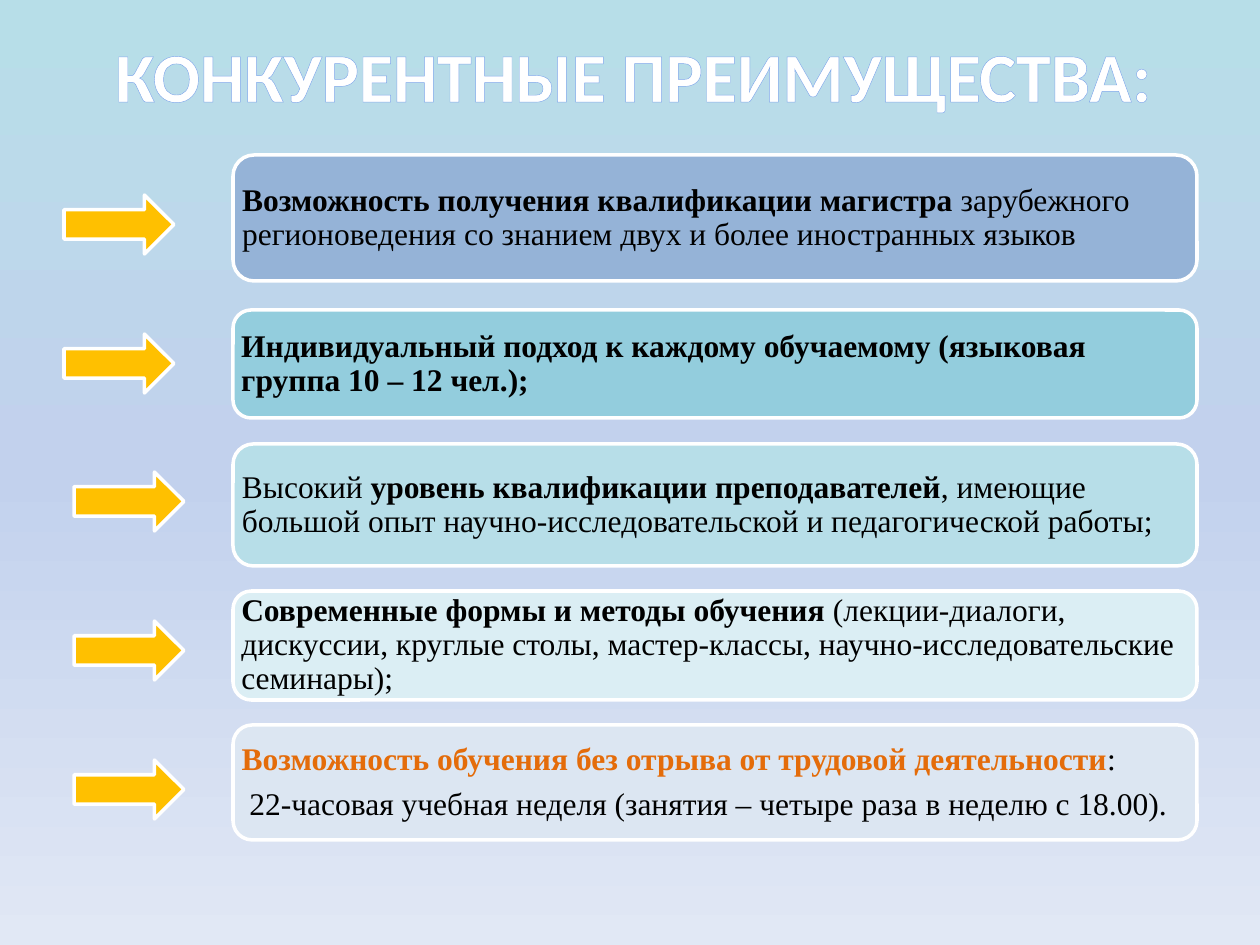
from copy import deepcopy
from lxml.etree import SubElement
from pptx import Presentation
from pptx.dml.color import RGBColor as Rgb
from pptx.enum.shapes import MSO_SHAPE as Shape
from pptx.enum.text import MSO_ANCHOR as Anchor, MSO_AUTO_SIZE as AutoSize, PP_ALIGN as Align
from pptx.oxml.ns import qn
from pptx.util import Pt

EMU_PER_PX = 914400 / 126
COLORS = {
    "sky": "B7DEE8", "periwinkle": "C2D1ED", "mist": "E1E8F5",
    "white": "FFFFFF", "black": "000000", "outline": "7EA6EA",
    "blue": "95B3D7", "teal": "93CDDD", "ice": "DBEEF4", "pale": "DCE6F2",
    "orange": "E46C0A", "amber": "FFC000",
}
TITLE = "КОНКУРЕНТНЫЕ ПРЕИМУЩЕСТВА:"
TITLE_FONT = {"name": "Calibri", "size": Pt(40), "bold": True}
CARD_FONT = {"name": "Times New Roman", "size": Pt(18)}
CARD_FRAME = {"word_wrap": True, "vertical_anchor": Anchor.MIDDLE,
              **{f"margin_{side}": round(3 * EMU_PER_PX) for side in ("left", "right", "top", "bottom")}}
CARD_PARAGRAPH = {"alignment": Align.LEFT, "line_spacing": 0.9, "space_after": Pt(6.3)}
CARD_LEFT, CARD_WIDTH = 233, 964
ARROW_WIDTH, ARROW_HEIGHT = 110, 59
ADVANTAGES = [
    {"top": 155, "height": 126, "fill": "blue", "arrow": (64, 195), "text": [
        [("Возможность получения квалификации магистра", True, "black"),
         (" зарубежного регионоведения со знанием двух и более иностранных языков", False, "black")]]},
    {"top": 310, "height": 108, "fill": "teal", "arrow": (64, 334), "text": [
        [("Индивидуальный подход к каждому обучаемому (языковая группа 10 – 12 чел.);", True, "black")]]},
    {"top": 444, "height": 122, "fill": "sky", "arrow": (74, 472), "text": [
        [("Высокий ", False, "black"),
         ("уровень квалификации преподавателей", True, "black"),
         (", имеющие большой опыт научно-исследовательской и педагогической работы;", False, "black")]]},
    {"top": 591, "height": 109, "fill": "ice", "arrow": (74, 621), "text": [
        [("Современные формы и методы обучения ", True, "black"),
         ("(лекции-диалоги, дискуссии, круглые столы, мастер-классы, "
          "научно-исследовательские семинары);", False, "black")]]},
    {"top": 725, "height": 115, "fill": "pale", "arrow": (74, 760), "text": [
        [("Возможность обучения без отрыва от трудовой деятельности", True, "orange"),
         (":", False, "black")],
        [(" 22-часовая учебная неделя (занятия – четыре раза в неделю с 18.00).", False, "black")]]},
]


def px(*lengths):
    return [round(length * EMU_PER_PX) for length in lengths]


def color(name):
    return Rgb.from_string(COLORS[name])


def apply_format(target, values):
    for name, value in values.items():
        setattr(target, name, value)


def add_run(paragraph, text, font, color_name):
    run = paragraph.add_run()
    run.text = text
    apply_format(run.font, font)
    run.font.color.rgb = color(color_name)
    return run


def add_block(slide, kind, box, fill):
    shape = slide.shapes.add_shape(kind, *px(*box))
    shape.shadow.inherit = False
    shape.fill.solid()
    shape.fill.fore_color.rgb = color(fill)
    shape.line.color.rgb = color("white")
    shape.line.width = Pt(2)
    return shape


def paint_background(slide):
    fill = slide.background.fill
    fill.gradient()
    fill.gradient_angle = 270
    stop_list = slide.element.find(".//" + qn("a:gsLst"))
    stop_list.insert(1, deepcopy(stop_list[0]))
    stops = zip(fill.gradient_stops, (0, 0.5, 1), ("sky", "periwinkle", "mist"))
    for stop, position, name in stops:
        stop.position = position
        stop.color.rgb = color(name)


def add_title(slide, box):
    frame = slide.shapes.add_textbox(*px(*box)).text_frame
    apply_format(frame, {"word_wrap": True, "auto_size": AutoSize.SHAPE_TO_FIT_TEXT})
    paragraph = frame.paragraphs[0]
    paragraph.alignment = Align.CENTER
    run = add_run(paragraph, TITLE, TITLE_FONT, "white")
    properties = run.font._element
    outline = SubElement(properties, qn("a:ln"), w=str(Pt(2.48)))
    outline_fill = SubElement(outline, qn("a:solidFill"))
    SubElement(outline_fill, qn("a:srgbClr"), val=COLORS["outline"])
    properties.insert(0, outline)


def add_card(slide, box, fill, paragraphs):
    frame = add_block(slide, Shape.ROUNDED_RECTANGLE, box, fill).text_frame
    apply_format(frame, CARD_FRAME)
    for index, runs in enumerate(paragraphs):
        paragraph = frame.add_paragraph() if index else frame.paragraphs[0]
        apply_format(paragraph, CARD_PARAGRAPH)
        for text, bold, color_name in runs:
            add_run(paragraph, text, {**CARD_FONT, "bold": bold}, color_name)


def add_advantages(slide, left, width):
    for item in ADVANTAGES:
        add_card(slide, (left, item["top"], width, item["height"]), item["fill"], item["text"])
        add_block(slide, Shape.RIGHT_ARROW, (*item["arrow"], ARROW_WIDTH, ARROW_HEIGHT), "amber")


def main():
    presentation = Presentation()
    presentation.slide_width, presentation.slide_height = px(1260, 945)
    slide = presentation.slides.add_slide(presentation.slide_layouts[6])
    paint_background(slide)
    add_title(slide, (35, 26, 1197, 97))
    add_advantages(slide, CARD_LEFT, CARD_WIDTH)
    presentation.save("out.pptx")


if __name__ == "__main__":
    main()
